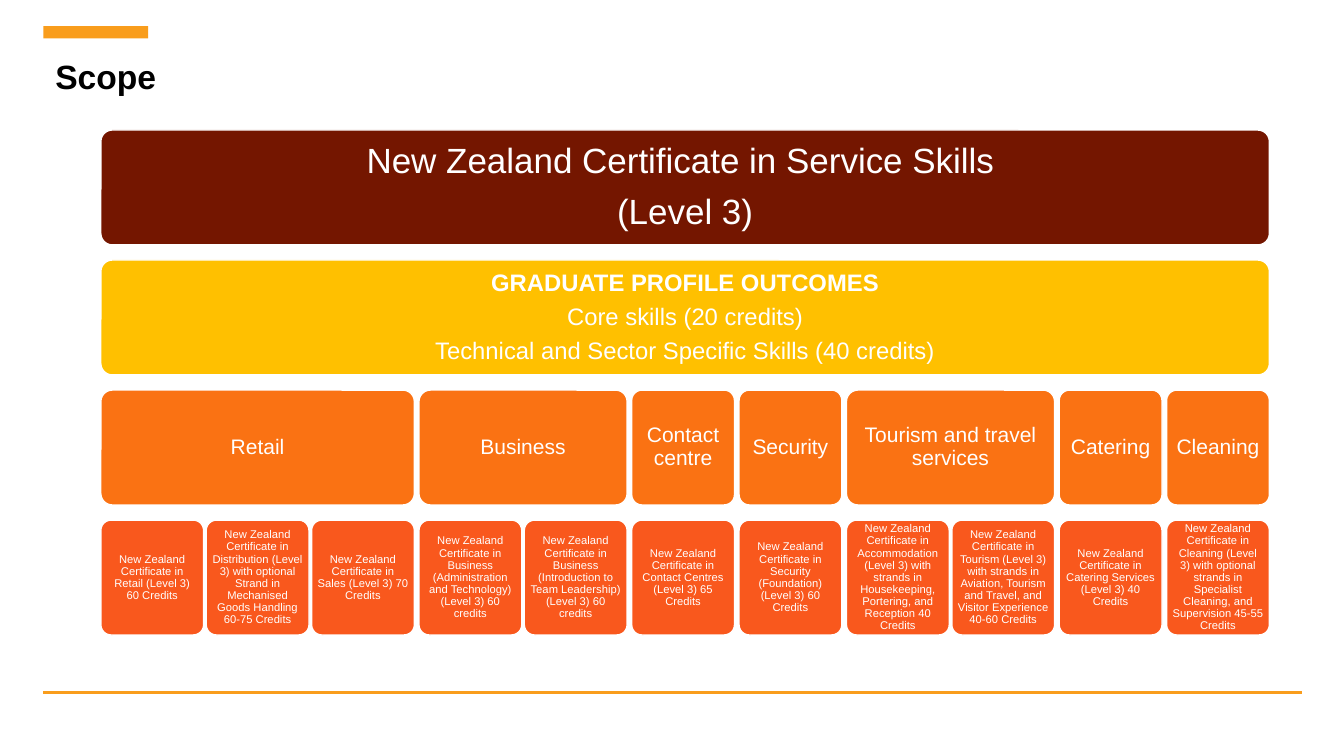
from dataclasses import dataclass

from lxml import etree
from pptx import Presentation
from pptx.dml.color import RGBColor
from pptx.enum.shapes import MSO_CONNECTOR, MSO_SHAPE
from pptx.enum.text import MSO_ANCHOR, PP_ALIGN
from pptx.oxml.ns import qn
from pptx.util import Inches, Pt

HEADING = "Scope"
QUALIFICATION = ["New Zealand Certificate in Service Skills ", "(Level 3)"]
OUTCOMES = [
    "GRADUATE PROFILE OUTCOMES",
    "Core skills (20 credits)",
    "Technical and Sector Specific Skills (40 credits)",
]
PREFIX = "New Zealand Certificate in "
SECTORS = [
    ("Retail", [
        "Retail (Level 3) 60 Credits",
        "Distribution (Level 3) with optional Strand in Mechanised Goods Handling 60-75 Credits",
        "Sales (Level 3) 70 Credits",
    ]),
    ("Business", [
        "Business (Administration and Technology) (Level 3) 60 credits",
        "Business (Introduction to Team Leadership) (Level 3) 60 credits",
    ]),
    ("Contact centre", ["Contact Centres (Level 3) 65 Credits"]),
    ("Security", ["Security (Foundation) (Level 3) 60 Credits"]),
    ("Tourism and travel services", [
        "Accommodation (Level 3) with strands in Housekeeping, Portering, and Reception 40 Credits",
        "Tourism (Level 3) with strands in Aviation, Tourism and Travel, "
        "and Visitor Experience 40-60 Credits",
    ]),
    ("Catering", ["Catering Services (Level 3) 40 Credits"]),
    ("Cleaning", [
        "Cleaning (Level 3) with optional strands in Specialist Cleaning, "
        "and Supervision 45-55 Credits",
    ]),
]


@dataclass(frozen=True)
class Tier:
    """Look of one row of boxes: row number, fill, type size and text inset."""
    row: int
    fill: str
    size: int
    inset: float


@dataclass(frozen=True)
class Theme:
    font: str = "Arial"
    accent: str = "F99D1C"
    ink: str = "000000"
    paper: str = "FFFFFF"
    heading_size: int = 24
    qualification: Tier = Tier(0, "741600", 25, 0.1)
    outcomes: Tier = Tier(1, "FFC000", 17, 0.07)
    sector: Tier = Tier(2, "FA7213", 15, 0.05)
    certificate: Tier = Tier(3, "F9581D", 8, 0.03)


THEME = Theme()
SLIDE_W, SLIDE_H = 13.33, 7.5
LEFT, TOP, WIDTH = 1, 1.29, 11.59
ROW_PITCH, ROW_H = 1.29, 1.14
COLUMN_W, COLUMN_GAP = 1.02, 0.025


def span(columns):
    return columns * COLUMN_W + (columns - 1) * COLUMN_GAP


def color(value):
    return RGBColor.from_string(value)


def add_text(paragraph, text, size, ink, bold=False):
    run = paragraph.add_run()
    run.text = text
    run.font.name, run.font.size, run.font.bold = THEME.font, Pt(size), bold
    run.font.color.rgb = color(ink)


def set_insets(frame, x, y):
    frame.margin_left = frame.margin_right = Inches(x)
    frame.margin_top = frame.margin_bottom = Inches(y)
    frame.word_wrap = True


def add_box(slide, tier, left, width, lines, bold_first=False):
    top = TOP + tier.row * ROW_PITCH
    box = slide.shapes.add_shape(MSO_SHAPE.ROUNDED_RECTANGLE, Inches(left), Inches(top),
                                 Inches(width), Inches(ROW_H))
    box.adjustments[0] = 0.1
    box.shadow.inherit = False
    box.fill.solid()
    box.fill.fore_color.rgb = color(tier.fill)
    box.line.color.rgb = color(THEME.paper)
    box.line.width = Pt(1)
    frame = box.text_frame
    set_insets(frame, tier.inset, tier.inset)
    frame.vertical_anchor = MSO_ANCHOR.MIDDLE
    for index, line in enumerate(lines):
        paragraph = frame.paragraphs[0] if index == 0 else frame.add_paragraph()
        paragraph.alignment = PP_ALIGN.CENTER
        paragraph.line_spacing = 0.9
        if index < len(lines) - 1:
            paragraph.space_after = Pt(round(0.35 * tier.size))
        add_text(paragraph, line, tier.size, THEME.paper, bold_first and index == 0)


def add_frame(slide):
    """Accent bar, heading and bottom rule."""
    bar = slide.shapes.add_shape(MSO_SHAPE.RECTANGLE, Inches(0.43), Inches(0.26),
                                 Inches(1.04), Inches(0.12))
    bar.shadow.inherit = False
    bar.fill.solid()
    bar.fill.fore_color.rgb = color(THEME.accent)
    bar.line.fill.background()

    rule_y = Inches(6.87)
    rule = slide.shapes.add_connector(MSO_CONNECTOR.STRAIGHT, Inches(0.43), rule_y,
                                      Inches(12.91), rule_y)
    rule.line.color.rgb = color(THEME.accent)
    rule.line.width = Pt(2.25)
    etree.SubElement(rule.element.spPr, qn("a:effectLst"))

    heading = slide.shapes.add_textbox(Inches(0.45), Inches(0.51), Inches(7.22), Inches(0.5))
    set_insets(heading.text_frame, 0.1, 0.05)
    add_text(heading.text_frame.paragraphs[0], HEADING, THEME.heading_size, THEME.ink, True)


def add_sectors(slide):
    used = sum(span(len(certificates)) for _, certificates in SECTORS)
    sector_gap = (WIDTH - used) / (len(SECTORS) - 1)
    left = LEFT
    for sector, certificates in SECTORS:
        width = span(len(certificates))
        add_box(slide, THEME.sector, left, width, [sector])
        for column, certificate in enumerate(certificates):
            add_box(slide, THEME.certificate, left + column * (COLUMN_W + COLUMN_GAP),
                    COLUMN_W, [PREFIX + certificate])
        left += width + sector_gap


def main():
    deck = Presentation()
    deck.slide_width, deck.slide_height = Inches(SLIDE_W), Inches(SLIDE_H)
    slide = deck.slides.add_slide(deck.slide_layouts[6])
    add_frame(slide)
    add_box(slide, THEME.qualification, LEFT, WIDTH, QUALIFICATION)
    add_box(slide, THEME.outcomes, LEFT, WIDTH, OUTCOMES, bold_first=True)
    add_sectors(slide)
    deck.save("out.pptx")


if __name__ == "__main__":
    main()
